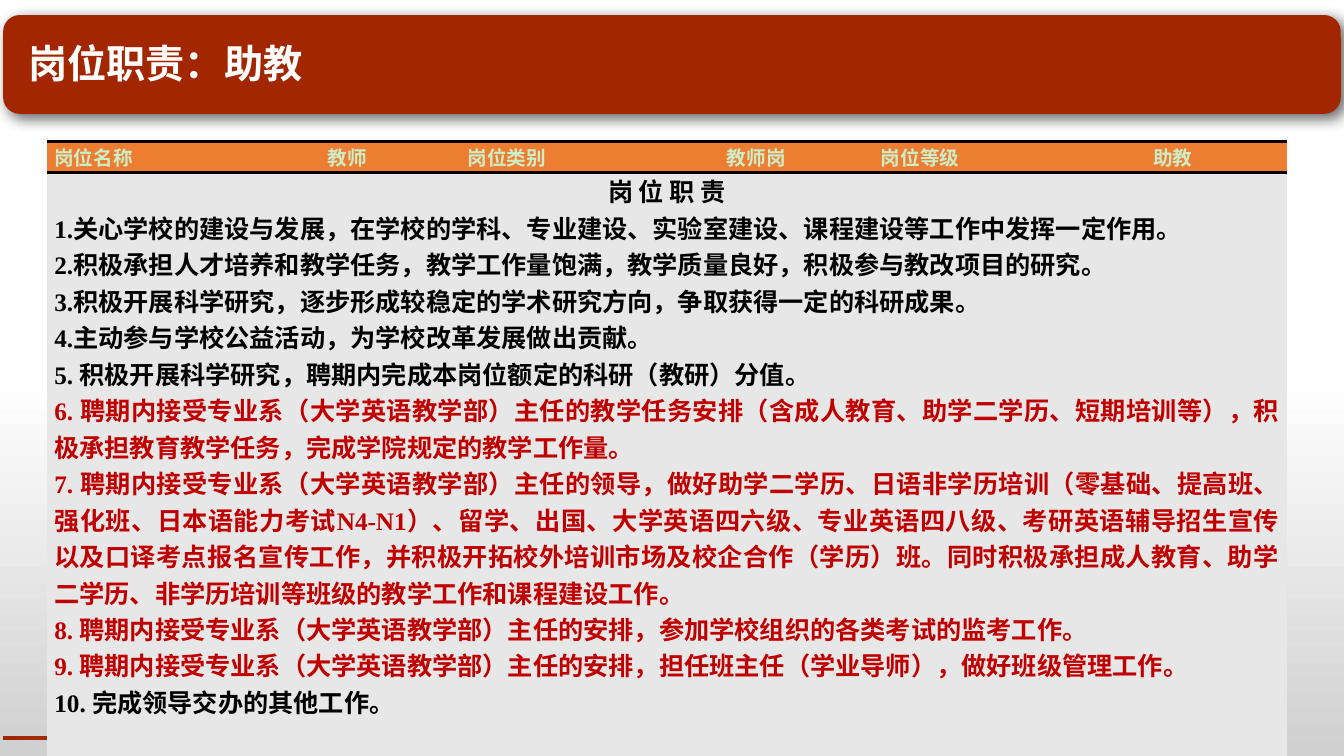
import pptx
import pptx.util
import pptx.dml.color
import pptx.enum.shapes
import pptx.enum.text
import pptx.oxml
import pptx.oxml.ns

Cm, Pt = pptx.util.Cm, pptx.util.Pt
RGB = pptx.dml.color.RGBColor
SHAPE = pptx.enum.shapes.MSO_SHAPE
MID = pptx.enum.text.MSO_ANCHOR.MIDDLE
TOP = pptx.enum.text.MSO_ANCHOR.TOP
ALIGN = pptx.enum.text.PP_ALIGN

# Content
TITLE = "岗位职责：助教"
HEAD = ["岗位名称", "教师", "岗位类别", "教师岗", "岗位等级", "助教"]
DUTY = "岗 位 职 责"
ITEMS = [
    "1.关心学校的建设与发展，在学校的学科、专业建设、实验室建设、课程建设等工作中发挥一定作用。",
    "2.积极承担人才培养和教学任务，教学工作量饱满，教学质量良好，积极参与教改项目的研究。",
    "3.积极开展科学研究，逐步形成较稳定的学术研究方向，争取获得一定的科研成果。",
    "4.主动参与学校公益活动，为学校改革发展做出贡献。",
    "5. 积极开展科学研究，聘期内完成本岗位额定的科研（教研）分值。",
    "6. 聘期内接受专业系（大学英语教学部）主任的教学任务安排（含成人教育、助学二学历、短期培训等），"
    "积极承担教育教学任务，完成学院规定的教学工作量。",
    "7. 聘期内接受专业系（大学英语教学部）主任的领导，做好助学二学历、日语非学历培训"
    "（零基础、提高班、强化班、日本语能力考试N4-N1）、留学、出国、大学英语四六级、专业英语四八级、"
    "考研英语辅导招生宣传以及口译考点报名宣传工作，并积极开拓校外培训市场及校企合作（学历）班。"
    "同时积极承担成人教育、助学二学历、非学历培训等班级的教学工作和课程建设工作。",
    "8. 聘期内接受专业系（大学英语教学部）主任的安排，参加学校组织的各类考试的监考工作。",
    "9. 聘期内接受专业系（大学英语教学部）主任的安排，担任班主任（学业导师），做好班级管理工作。",
    "10. 完成领导交办的其他工作。",
]
KEY = range(5, 9)  # items set in red

# Style
SANS, SERIF = "Noto Sans CJK SC", "Times New Roman"
BRICK, RED = RGB(0xA2, 0x27, 0x00), RGB(0xC0, 0x00, 0x00)
WHITE, BLACK = RGB(0xFF, 0xFF, 0xFF), RGB(0, 0, 0)
MINT, ORANGE = RGB(0xCC, 0xED, 0xC7), RGB(0xED, 0x7D, 0x31)
PALE, SILVER = RGB(0xE7, 0xE7, 0xE7), RGB(0xD0, 0xD0, 0xD0)
GREY = RGB(0x76, 0x71, 0x71)
COLS = [4.72, 5.69, 4.5, 5.92, 4.67, 5.74]
ROWS = [0.79, 14.7]
PLAIN = "{2D5ABB26-0587-4C30-8999-92F81FD0307C}"
NS = pptx.oxml.ns.nsdecls("a")


def xml(text):
    return pptx.oxml.parse_xml(text.replace(" ", f" {NS} ", 1))


def blend(fill, node, angle, stops):
    fill.gradient()
    fill.gradient_angle = angle
    box = node.xpath(".//a:gsLst")[0]
    for old in list(box):
        box.remove(old)
    for pos, hue in stops:
        box.append(xml(f'<a:gs pos="{pos * 1000}"><a:srgbClr val="{hue}"/></a:gs>'))


def block(kind, *place):
    shape = slide.shapes.add_shape(kind, *map(Cm, place))
    shape.shadow.inherit = False
    shape.line.fill.background()
    return shape


def style(para, size, hue, align, face=SERIF):
    para.alignment = align
    font = para.font
    font.size, font.bold, font.name = Pt(size), True, face
    font.color.rgb = hue
    east = xml(f'<a:ea typeface="{SANS}"/>')
    para._p.xpath("./a:pPr/a:defRPr/a:latin")[0].addnext(east)
    for run in para.runs:
        run.font.size, run.font.bold, run.font.name = Pt(size), True, face
        run.font.color.rgb = hue
        run._r.xpath("./a:rPr/a:latin")[0].addnext(
            xml(f'<a:ea typeface="{SANS}"/>'))


def dress(cell, hue, anchor):
    cell.fill.solid()
    cell.fill.fore_color.rgb = hue
    cell.margin_left = cell.margin_right = Cm(0.18)
    cell.margin_top = cell.margin_bottom = 0
    cell.vertical_anchor = anchor


def rule(cell, side):
    cell._tc.get_or_add_tcPr().insert(0, xml(
        f'<a:{side} w="25400"><a:solidFill><a:srgbClr val="{BLACK}"/>'
        f'</a:solidFill></a:{side}>'))


deck = pptx.Presentation()
deck.slide_width, deck.slide_height = Cm(33.87), Cm(19.05)
slide = deck.slides.add_slide(deck.slide_layouts[5])
blend(slide.background.fill, slide.element, 270, [(0, WHITE), (50, WHITE), (100, SILVER)])

# Banner and foot line, behind the title
banner = block(SHAPE.ROUNDED_RECTANGLE, 0.08, 0.38, 33.71, 2.49)
banner.fill.solid()
banner.fill.fore_color.rgb = BRICK
banner.element.xpath("./p:spPr/a:effectLst")[0].append(xml(
    '<a:outerShdw blurRad="127000" dist="50800" dir="2700000">'
    '<a:srgbClr val="000000"><a:alpha val="60000"/></a:srgbClr></a:outerShdw>'))
foot = block(SHAPE.RECTANGLE, 0.08, 18.54, 26.11, 0.1)
blend(foot.fill, foot.element, 0, [(0, BRICK), (58, GREY), (100, SILVER)])

# Title
title = slide.shapes.title
title.left, title.top, title.width, title.height = map(Cm, (0.46, 0.46, 32.94, 2.39))
title.text_frame.text = TITLE
title.text_frame.vertical_anchor = MID
title.text_frame.paragraphs[0].line_spacing = 0.9
style(title.text_frame.paragraphs[0], 28, WHITE, ALIGN.LEFT, SANS)
slide.shapes.element.append(title.element)

# Table
frame = slide.shapes.add_table(2, len(COLS), Cm(1.19), Cm(3.56), Cm(sum(COLS)), Cm(sum(ROWS)))
table = frame.table
frame.element.xpath(".//a:tableStyleId")[0].text = PLAIN
for row, tall in zip(table.rows, ROWS):
    row.height = Cm(tall)
for i, (wide, word) in enumerate(zip(COLS, HEAD)):
    table.columns[i].width = Cm(wide)
    cell = table.cell(0, i)
    cell.text = word
    dress(cell, ORANGE, MID)
    rule(cell, "lnB")
    rule(cell, "lnT")
    style(cell.text_frame.paragraphs[0], 14, MINT, ALIGN.CENTER if i % 2 else ALIGN.JUSTIFY)

# Duties, in one merged cell
body = table.cell(1, 0)
body.merge(table.cell(1, len(COLS) - 1))
body.text = "\n".join([DUTY] + ITEMS)
dress(body, PALE, TOP)
lead, *rest = body.text_frame.paragraphs
style(lead, 18, BLACK, ALIGN.CENTER)
for i, para in enumerate(rest):
    style(para, 18, RED if i in KEY else BLACK, ALIGN.JUSTIFY)

deck.save("out.pptx")
